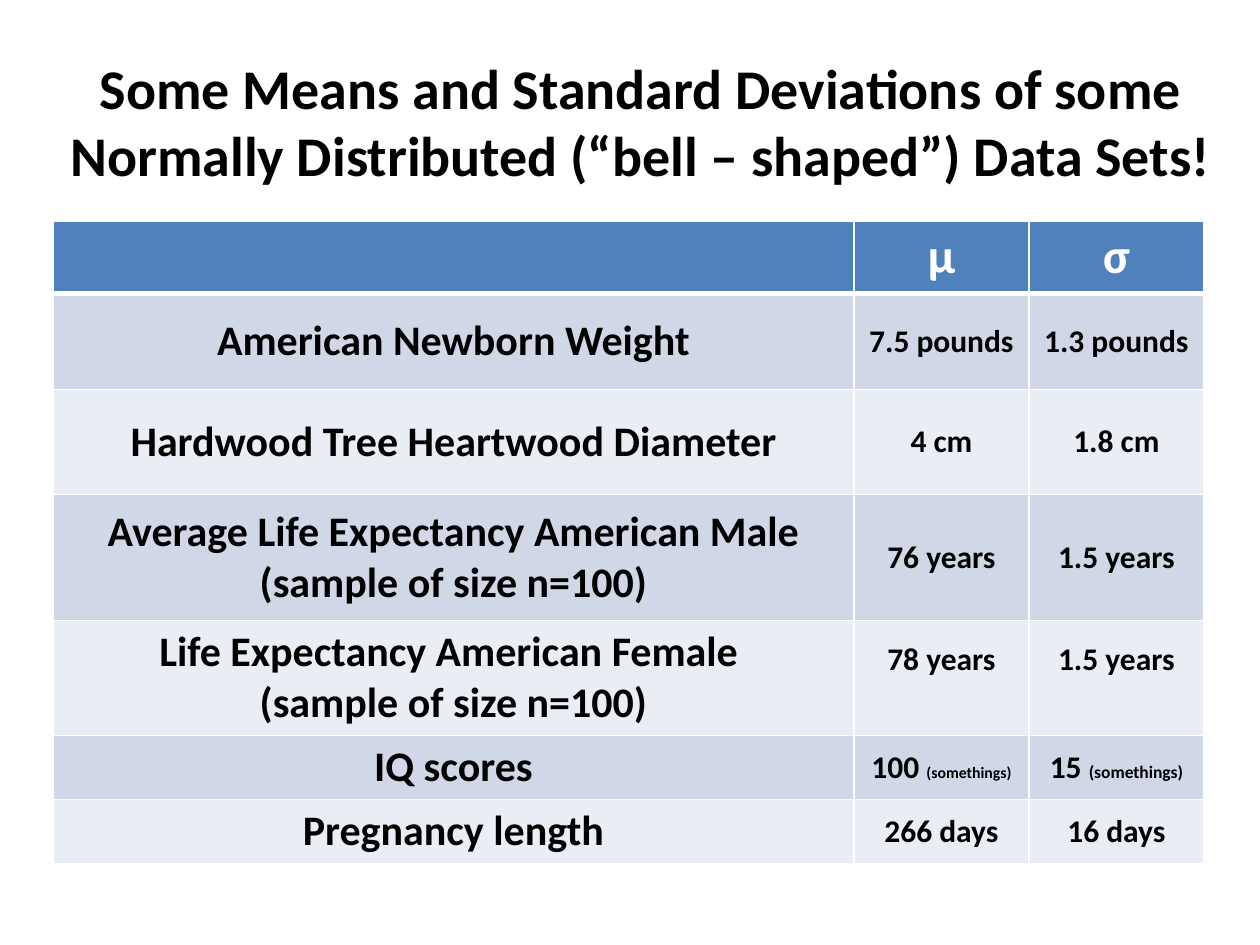
import lxml.etree
import pptx
import pptx.dml.color
import pptx.enum.text
import pptx.oxml.ns
import pptx.util

HEADINGS = ["", "μ", "σ"]
DATA_SETS = [
    ["American Newborn Weight", "7.5 pounds", "1.3 pounds"],
    ["Hardwood Tree Heartwood Diameter", "4 cm", "1.8 cm"],
    ["Average Life Expectancy American Male (sample of size n=100)", "76 years", "1.5 years"],
    ["Life Expectancy American Female \n(sample of size n=100)", "78 years", "1.5 years"],
    ["IQ scores", [("100 ", 18), ("(somethings)", 9)], [("15 ", 18), ("(somethings)", 10)]],
    ["Pregnancy length", "266 days", "16 days"],
]
RAISED_ROW = 4
COLUMN_WIDTHS = [801, 175, 175]
ROW_HEIGHTS = [72, 96, 105, 126, 115, 64, 64]


def px(length):
    return pptx.util.Emu(round(length * 914400 / 126))


def rgb(color):
    return pptx.dml.color.RGBColor.from_string(color)


def apply(target, values):
    for name, value in values.items():
        setattr(target, name, value)


class Deck:
    font = {"name": "Calibri", "bold": True}
    ink, paper, header = "000000", "FFFFFF", "4F81BD"
    bands = ["D0D8E8", "E9EDF4"]

    def __init__(self, width, height):
        self.file = pptx.Presentation()
        apply(self.file, {"slide_width": px(width), "slide_height": px(height)})
        self.slide = self.file.slides.add_slide(self.file.slide_layouts[5])

    def add_text(self, frame, paragraphs, color):
        """Fill a frame with paragraphs, each a list of (text, size) runs."""
        for index, runs in enumerate(paragraphs):
            paragraph = frame.add_paragraph() if index else frame.paragraphs[0]
            paragraph.alignment = pptx.enum.text.PP_ALIGN.CENTER
            for text, size in runs:
                run = paragraph.add_run()
                run.text = text
                apply(run.font, {**self.font, "size": pptx.util.Pt(size)})
                run.font.color.rgb = rgb(color)

    def title(self, text, left, top, width, height):
        title = self.slide.shapes.title
        apply(title, {"left": px(left), "top": px(top),
                      "width": px(width), "height": px(height)})
        apply(title.text_frame, {
            "word_wrap": True,
            "auto_size": pptx.enum.text.MSO_AUTO_SIZE.NONE,
            "vertical_anchor": pptx.enum.text.MSO_ANCHOR.MIDDLE,
        })
        self.add_text(title.text_frame, [[(text, 32)]], self.ink)

    def borders(self, cell, widths):
        """Draw the cell's edges; must run before the fill is set."""
        properties = cell._tc.get_or_add_tcPr()
        for side, width in widths.items():
            line = lxml.etree.SubElement(
                properties, pptx.oxml.ns.qn(f"a:ln{side}"), w=str(pptx.util.Pt(width)))
            fill = lxml.etree.SubElement(line, pptx.oxml.ns.qn("a:solidFill"))
            lxml.etree.SubElement(fill, pptx.oxml.ns.qn("a:srgbClr"), val=self.paper)

    def cell(self, cell, content, row, column):
        self.borders(cell, {"L": 1, "R": 1, "T": 3 if row == 1 else 1,
                            "B": 3 if row == 0 else 1})
        cell.fill.solid()
        cell.fill.fore_color.rgb = rgb(self.bands[(row - 1) % 2] if row else self.header)
        if row:
            cell.vertical_anchor = pptx.enum.text.MSO_ANCHOR.MIDDLE
        if row == RAISED_ROW and column:
            cell.margin_bottom = px(44)
        size = 28 if row == 0 else 18 if column else 24
        if isinstance(content, str):
            paragraphs = [[(line, size)] for line in content.split("\n") if line]
        else:
            paragraphs = [content]
        self.add_text(cell.text_frame, paragraphs, self.ink if row else self.paper)

    def table(self, rows, left, top, widths, heights):
        table = self.slide.shapes.add_table(
            len(heights), len(widths), px(left), px(top),
            px(sum(widths)), px(sum(heights))).table
        for column, width in zip(table.columns, widths):
            column.width = px(width)
        for row, height in zip(table.rows, heights):
            row.height = px(height)
        for row, contents in enumerate(rows):
            for column, content in enumerate(contents):
                self.cell(table.cell(row, column), content, row, column)


def main():
    deck = Deck(1260, 945)
    deck.title("Some Means and Standard Deviations of some Normally Distributed "
               "(“bell – shaped”) Data Sets!", 32, 42, 1218, 157)
    deck.table([HEADINGS] + DATA_SETS, 53, 221, COLUMN_WIDTHS, ROW_HEIGHTS)
    deck.file.save("out.pptx")


if __name__ == "__main__":
    main()
